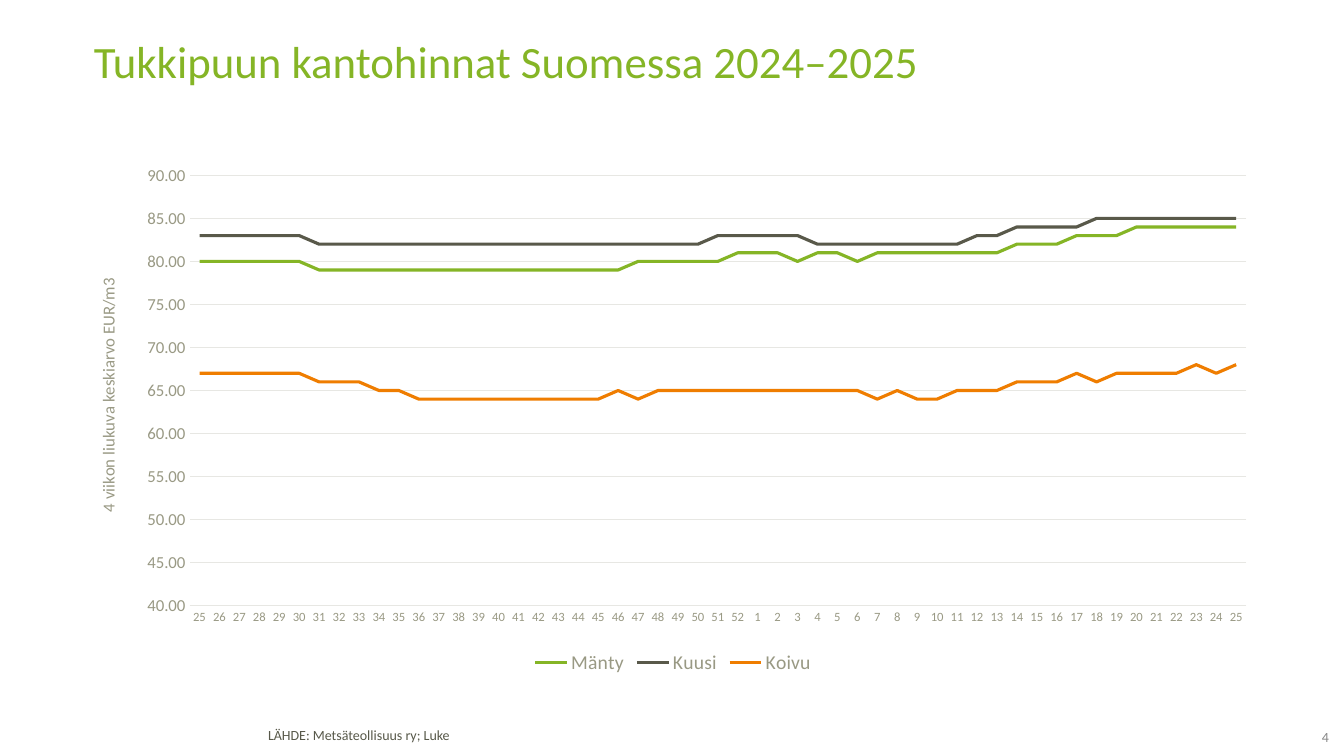
from dataclasses import dataclass

from pptx import Presentation
from pptx import util as u
from pptx.chart.data import CategoryChartData
from pptx.dml.color import RGBColor
from pptx.enum import chart as ch, text
from pptx.oxml import parse_xml
from pptx.oxml.ns import nsdecls, qn

# Content
TITLE = "Tukkipuun kantohinnat Suomessa 2024–2025"
SOURCE = "LÄHDE: Metsäteollisuus ry; Luke"
PAGE_NUMBER = "4"
AXIS_TITLE = "4 viikon liukuva keskiarvo EUR/m3"
WEEKS = [str(week) for week in [*range(25, 53), *range(1, 26)]]
PRICES = {
    "Mänty": [
        80, 80, 80, 80, 80, 80, 79, 79, 79, 79, 79, 79, 79, 79, 79, 79, 79, 79,
        79, 79, 79, 79, 80, 80, 80, 80, 80, 81, 81, 81, 80, 81, 81, 80, 81, 81,
        81, 81, 81, 81, 81, 82, 82, 82, 83, 83, 83, 84, 84, 84, 84, 84, 84],
    "Kuusi": [
        83, 83, 83, 83, 83, 83, 82, 82, 82, 82, 82, 82, 82, 82, 82, 82, 82, 82,
        82, 82, 82, 82, 82, 82, 82, 82, 83, 83, 83, 83, 83, 82, 82, 82, 82, 82,
        82, 82, 82, 83, 83, 84, 84, 84, 84, 85, 85, 85, 85, 85, 85, 85, 85],
    "Koivu": [
        67, 67, 67, 67, 67, 67, 66, 66, 66, 65, 65, 64, 64, 64, 64, 64, 64, 64,
        64, 64, 64, 65, 64, 65, 65, 65, 65, 65, 65, 65, 65, 65, 65, 65, 64, 65,
        64, 64, 65, 65, 65, 66, 66, 66, 67, 66, 67, 67, 67, 67, 68, 67, 68],
}
CHART_WIDTH, CHART_HEIGHT = 11.69, 5.16


@dataclass(frozen=True)
class Theme:
    font: str = "Calibri"
    green: str = "85B526"
    dark: str = "59594A"
    source: str = "58594A"
    orange: str = "EF7D00"
    label: str = "999984"
    grid: str = "E7E7E3"
    number: str = "878787"
    title_size: float = 32
    legend_size: float = 14
    axis_size: float = 12
    small_size: float = 10
    week_size: float = 9


THEME = Theme()


def set_font(font, size, color):
    font.name, font.size, font.bold = THEME.font, u.Pt(size), False
    font.color.rgb = RGBColor.from_string(color)


def set_line(line, color, width):
    line.color.rgb = RGBColor.from_string(color)
    line.width = u.Pt(width)


def place(shape, left, top, width, height):
    shape.left, shape.top = u.Inches(left), u.Inches(top)
    shape.width, shape.height = u.Inches(width), u.Inches(height)


def set_layout(parent, index, target="", **inches):
    """Pin a chart part at inches from the chart's top left corner."""
    for old in parent.findall(qn("c:layout")):
        parent.remove(old)
    items = f'<c:layoutTarget val="{target}"/>' if target else ""
    items += '<c:xMode val="edge"/><c:yMode val="edge"/>'
    for key, value in inches.items():
        whole = CHART_WIDTH if key in "xw" else CHART_HEIGHT
        items += f'<c:{key} val="{value / whole}"/>'
    parent.insert(index, parse_xml(
        f'<c:layout {nsdecls("c")}><c:manualLayout>{items}</c:manualLayout></c:layout>'))


def fill_text(shape, words, size, color, spacing=1.0, align=text.PP_ALIGN.LEFT):
    shape.text_frame.word_wrap = True
    shape.text_frame.text = words
    para = shape.text_frame.paragraphs[0]
    para.alignment, para.line_spacing = align, spacing
    set_font(para.font, size, color)


def add_price_chart(page):
    data = CategoryChartData(number_format="#,##0.00")
    data.categories = WEEKS
    for name, values in PRICES.items():
        data.add_series(name, values)
    chart = page.shapes.add_chart(
        ch.XL_CHART_TYPE.LINE, u.Inches(0.83), u.Inches(1.57),
        u.Inches(CHART_WIDTH), u.Inches(CHART_HEIGHT), data).chart
    chart.has_title = False
    set_font(chart.font, THEME.small_size, THEME.dark)

    # Series
    chart.plots[0].vary_by_categories = False
    for series, color in zip(chart.series, (THEME.green, THEME.dark, THEME.orange)):
        series.smooth = False
        series.marker.style = ch.XL_MARKER_STYLE.NONE
        set_line(series.format.line, color, 2.25)

    # Axes
    weeks, prices = chart.category_axis, chart.value_axis
    for axis, size in ((weeks, THEME.week_size), (prices, THEME.axis_size)):
        axis.major_tick_mark = axis.minor_tick_mark = ch.XL_TICK_MARK.NONE
        set_font(axis.tick_labels.font, size, THEME.label)
    set_line(weeks.format.line, THEME.grid, 0.75)
    prices.format.line.fill.background()
    prices.minimum_scale, prices.maximum_scale, prices.major_unit = 40, 90, 5
    prices.tick_labels.number_format = "#,##0.00"
    prices.tick_labels.number_format_is_linked = False
    prices.has_major_gridlines = True
    set_line(prices.major_gridlines.format.line, THEME.grid, 0.75)
    heading = prices.axis_title
    heading.text_frame.text = AXIS_TITLE
    set_font(heading.text_frame.paragraphs[0].font, THEME.axis_size, THEME.label)
    set_layout(heading._element, 1, x=0.1, y=1.16)

    # Legend and plot area
    chart.has_legend = True
    chart.legend.position = ch.XL_LEGEND_POSITION.BOTTOM
    chart.legend.include_in_layout = False
    set_font(chart.legend.font, THEME.legend_size, THEME.label)
    plot_area = chart._chartSpace.chart.plotArea
    set_layout(plot_area, 0, "inner", x=1.05, y=0.17, w=10.48, h=4.27)


def main():
    deck = Presentation()
    deck.slide_width, deck.slide_height = u.Inches(13.33), u.Inches(7.5)
    page = deck.slides.add_slide(deck.slide_layouts[5])

    # Title
    title = page.shapes.title
    place(title, 0.83, 0.39, 11.69, 0.98)
    fill_text(title, TITLE, THEME.title_size, THEME.green, 0.8)
    title.text_frame.vertical_anchor = text.MSO_ANCHOR.TOP

    add_price_chart(page)

    # Source line and page number
    source = page.shapes.add_textbox(0, 0, 0, 0)
    place(source, 2.56, 7.18, 7.18, 0.27)
    fill_text(source, SOURCE, THEME.small_size, THEME.source, 0.85)
    number = page.shapes.add_textbox(0, 0, 0, 0)
    place(number, 12.65, 7.24, 0.53, 0.19)
    fill_text(number, PAGE_NUMBER, THEME.small_size, THEME.number, align=text.PP_ALIGN.RIGHT)
    frame = number.text_frame
    frame.margin_left = frame.margin_right = frame.margin_top = 0
    frame.margin_bottom = u.Inches(0.04)
    frame.vertical_anchor = text.MSO_ANCHOR.MIDDLE

    deck.save("out.pptx")


if __name__ == "__main__":
    main()
